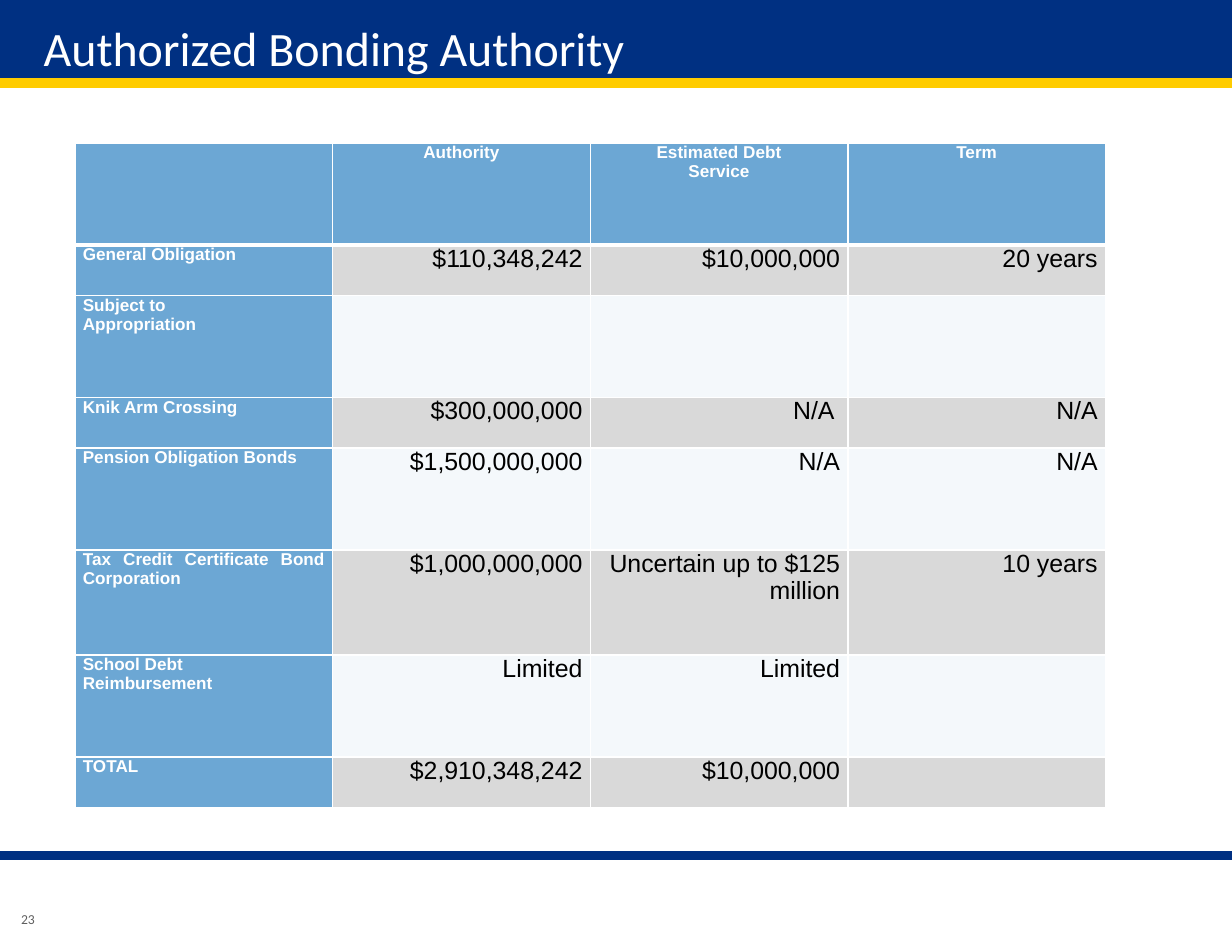
from dataclasses import dataclass

from lxml.etree import SubElement
from pptx import Presentation
from pptx.dml.color import RGBColor
from pptx.enum.shapes import MSO_CONNECTOR, MSO_SHAPE
from pptx.enum.text import MSO_ANCHOR, PP_ALIGN
from pptx.oxml.ns import qn
from pptx.util import Emu, Pt

EMU_PER_PX = 9144  # 100 px to the inch


@dataclass(frozen=True)
class Theme:
    navy: str = "003082"
    gold: str = "FFCC00"
    white: str = "FFFFFF"
    black: str = "000000"
    gray: str = "5F5F5F"
    label_fill: str = "6CA7D4"
    bands: tuple[str, str] = ("D9D9D9", "F4F8FB")
    head_font: str = "Calibri"
    body_font: str = "Arial"
    title_size: float = 30.8
    number_size: float = 8.8
    label_size: float = 11
    value_size: float = 16
    rule_width: float = 6
    border: float = 1
    header_border: float = 3


@dataclass(frozen=True)
class Rule:
    y: int
    color: str


@dataclass(frozen=True)
class Style:
    font: str
    size: float
    color: str
    bold: bool = False
    align: PP_ALIGN = PP_ALIGN.LEFT


@dataclass(frozen=True)
class Row:
    height: int
    cells: tuple[str, str, str, str]


THEME = Theme()
WIDTH, HEIGHT = 1100, 850
RULES = (Rule(74, THEME.gold), Rule(764, THEME.navy))

TITLE = Style(THEME.head_font, THEME.title_size, THEME.white)
NUMBER = Style(THEME.head_font, THEME.number_size, THEME.gray, align=PP_ALIGN.CENTER)
HEADER = Style(THEME.body_font, THEME.label_size, THEME.white, True, PP_ALIGN.CENTER)
LABEL = Style(THEME.body_font, THEME.label_size, THEME.white, True, PP_ALIGN.JUSTIFY)
VALUE = Style(THEME.body_font, THEME.value_size, THEME.black, align=PP_ALIGN.RIGHT)

TABLE_LEFT, TABLE_TOP, COLUMN_WIDTH = 67, 128, 230
ROWS = (
    Row(91, ("", "Authority", "Estimated Debt\nService", "Term")),
    Row(45, ("General Obligation", "$110,348,242", "$10,000,000", "20 years")),
    Row(91, ("Subject to\nAppropriation", "", "", "")),
    Row(45, ("Knik Arm Crossing", "$300,000,000", "N/A ", "N/A")),
    Row(91, ("Pension Obligation Bonds", "$1,500,000,000", "N/A", "N/A")),
    Row(94, ("Tax Credit Certificate Bond Corporation", "$1,000,000,000",
             "Uncertain up to $125 million", "10 years")),
    Row(91, ("School Debt\nReimbursement", "Limited", "Limited", "")),
    Row(45, ("TOTAL", "$2,910,348,242", "$10,000,000", "")),
)


def px(n: int) -> Emu:
    return Emu(n * EMU_PER_PX)


def rgb(color: str) -> RGBColor:
    return RGBColor.from_string(color)


def write(tf, text: str, style: Style) -> None:
    tf.text = text
    for p in tf.paragraphs:
        p.alignment = style.align
        p.font.name = style.font
        p.font.size = Pt(style.size)
        p.font.bold = style.bold
        p.font.color.rgb = rgb(style.color)


def add_text(s, box: tuple[int, int, int, int], text: str, style: Style,
             anchor: MSO_ANCHOR, wrap: bool, inset: int) -> None:
    tf = s.shapes.add_textbox(*map(px, box)).text_frame
    tf.word_wrap = wrap
    tf.vertical_anchor = anchor
    tf.margin_left = tf.margin_right = 0
    tf.margin_top = tf.margin_bottom = px(inset)
    write(tf, text, style)


def add_banner(s) -> None:
    sp = s.shapes.add_shape(MSO_SHAPE.RECTANGLE, 0, 0, px(WIDTH), px(76))
    sp.shadow.inherit = False
    sp.fill.solid()
    sp.fill.fore_color.rgb = rgb(THEME.navy)
    sp.line.fill.background()


def add_rule(s, rule: Rule) -> None:
    line = s.shapes.add_connector(MSO_CONNECTOR.STRAIGHT, 0, px(rule.y), px(WIDTH), px(rule.y))
    line.line.color.rgb = rgb(rule.color)
    line.line.width = Pt(THEME.rule_width)
    SubElement(line._element.spPr, qn("a:effectLst"))


def set_border(cell, side: str, width: float) -> None:
    ln = SubElement(cell._tc.get_or_add_tcPr(), qn(f"a:ln{side}"), w=str(Pt(width)))
    fill = SubElement(ln, qn("a:solidFill"))
    SubElement(fill, qn("a:srgbClr"), val=THEME.white)


def format_cell(cell, r: int, c: int, text: str) -> None:
    cell.margin_left = cell.margin_right = px(7)
    cell.margin_top = cell.margin_bottom = 0
    # The line under the header row is heavier than the rest
    for side in "LRTB":
        heavy = (r, side) in ((0, "B"), (1, "T"))
        set_border(cell, side, THEME.header_border if heavy else THEME.border)
    is_label = r == 0 or c == 0
    cell.fill.solid()
    cell.fill.fore_color.rgb = rgb(THEME.label_fill if is_label else THEME.bands[(r - 1) % 2])
    write(cell.text_frame, text, HEADER if r == 0 else LABEL if c == 0 else VALUE)


def add_bond_table(s) -> None:
    columns = len(ROWS[0].cells)
    table = s.shapes.add_table(
        len(ROWS), columns, px(TABLE_LEFT), px(TABLE_TOP),
        px(COLUMN_WIDTH * columns), px(sum(row.height for row in ROWS))).table
    table.first_row = table.horz_banding = False
    for column in table.columns:
        column.width = px(COLUMN_WIDTH)
    for r, row in enumerate(ROWS):
        table.rows[r].height = px(row.height)
        for c, text in enumerate(row.cells):
            format_cell(table.cell(r, c), r, c, text)


def main() -> None:
    prs = Presentation()
    prs.slide_width, prs.slide_height = px(WIDTH), px(HEIGHT)
    s = prs.slides.add_slide(prs.slide_layouts[6])

    # Frame: banner, rules and page number
    add_banner(s)
    for rule in RULES:
        add_rule(s, rule)
    add_text(s, (11, 808, 28, 27), "23", NUMBER, MSO_ANCHOR.TOP, False, 5)

    # Title and table
    add_text(s, (39, 15, 1023, 53), "Authorized Bonding Authority", TITLE,
             MSO_ANCHOR.BOTTOM, True, 0)
    add_bond_table(s)

    prs.save("out.pptx")


if __name__ == "__main__":
    main()
